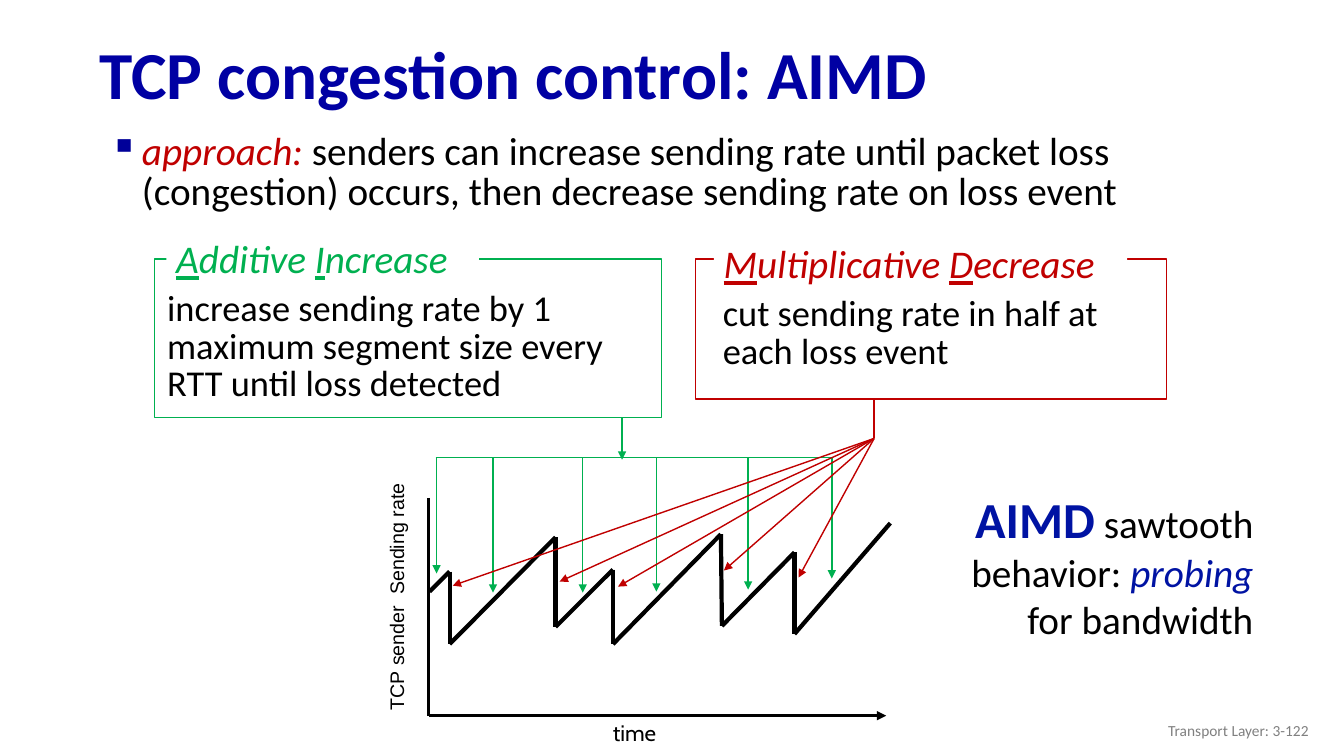
from lxml import etree
from pptx import Presentation
from pptx.dml.color import RGBColor
from pptx.enum.shapes import MSO_CONNECTOR, MSO_SHAPE
from pptx.enum.text import MSO_ANCHOR, PP_ALIGN
from pptx.oxml.ns import qn
from pptx.util import Inches, Pt

LINE = MSO_CONNECTOR.STRAIGHT
RECTANGLE = MSO_SHAPE.RECTANGLE
TOP, MIDDLE = MSO_ANCHOR.TOP, MSO_ANCHOR.MIDDLE
LEFT, RIGHT = PP_ALIGN.LEFT, PP_ALIGN.RIGHT
COLORS = {
    "title": "0000A3", "bullet": "000099", "accent": "0013A3", "text": "000000",
    "increase": "00B050", "decrease": "C00000", "footer": "808080", "paper": "FFFFFF",
}
SAWTOOTH = [
    (4.26, 5.87), (4.46, 5.67), (4.46, 6.39), (5.51, 5.33), (5.51, 6.22), (6.08, 5.65),
    (6.08, 6.39), (7.15, 5.3), (7.16, 6.21), (7.88, 5.48), (7.88, 6.29), (8.83, 5.19),
]
INCREASE_TIPS = [(4.33, 5.69), (4.89, 5.88), (5.78, 5.88), (6.51, 5.87), (7.42, 5.85), (8.25, 5.74)]
DECREASE_TIPS = [(7.92, 5.73), (4.49, 5.81), (5.55, 5.77), (6.13, 5.82), (7.18, 5.66)]
INCREASE_RAIL = 4.54
LOSS_HUB = (8.67, 4.35)


def rgb(name):
    """Return the named colour."""
    return RGBColor.from_string(COLORS[name])


def write(shape, paragraphs, size, font="Calibri", align=LEFT, anchor=TOP, spacing=1.0, wrap=True):
    """Fill a shape with paragraphs of (text, colour, font overrides) runs."""
    frame = shape.text_frame
    frame.word_wrap = wrap
    frame.vertical_anchor = anchor
    for index, runs in enumerate(paragraphs):
        paragraph = frame.add_paragraph() if index else frame.paragraphs[0]
        paragraph.alignment = align
        paragraph.line_spacing = spacing
        for text, color, overrides in runs:
            run = paragraph.add_run()
            run.text = text
            run.font.name = font
            run.font.size = Pt(overrides.get("size", size))
            run.font.color.rgb = rgb(color)
            run.font.bold = overrides.get("bold", False)
            run.font.italic = overrides.get("italic", False)
            run.font.underline = overrides.get("underline", False)


def add_text(slide, box, paragraphs, size, **layout):
    """Add a text box and return it."""
    shape = slide.shapes.add_textbox(*map(Inches, box))
    write(shape, paragraphs, size, **layout)
    return shape


def add_panel(slide, box, outline=None):
    """Add a white rectangle with an optional outline."""
    panel = slide.shapes.add_shape(RECTANGLE, *map(Inches, box))
    panel.shadow.inherit = False
    panel.fill.solid()
    panel.fill.fore_color.rgb = rgb("paper")
    if outline:
        panel.line.color.rgb = rgb(outline)
        panel.line.width = Pt(1)
    else:
        panel.line.fill.background()
    return panel


def add_line(slide, start, end, color, width=1, arrow=False):
    """Add a straight line, with an arrowhead at its end if asked."""
    line = slide.shapes.add_connector(LINE, *map(Inches, (*start, *end)))
    line.line.color.rgb = rgb(color)
    line.line.width = Pt(width)
    if arrow:
        etree.SubElement(line.line._get_or_add_ln(), qn("a:tailEnd"), type="triangle")
    etree.SubElement(line._element.spPr, qn("a:effectLst"))


def indent(shape, left, first=0, bullet=None):
    """Indent the first paragraph and give it an optional bullet."""
    properties = shape.text_frame.paragraphs[0]._p.get_or_add_pPr()
    properties.set("marL", str(Inches(left)))
    properties.set("indent", str(Inches(first)))
    if bullet:
        color = etree.SubElement(properties, qn("a:buClr"))
        etree.SubElement(color, qn("a:srgbClr"), val=COLORS["bullet"])
        etree.SubElement(properties, qn("a:buChar"), char=bullet)


def add_rule(slide, color, frame, body_box, body, heading_box, words):
    """Add a framed rule whose heading breaks the top edge."""
    add_panel(slide, frame, color)
    explanation = add_text(slide, body_box, [[(body, "text", {})]], 26, spacing=0.85)
    indent(explanation, 0.5)
    heading = []
    for word in words:
        heading.append((word[0], color, {"italic": True, "underline": True}))
        heading.append((word[1:], color, {"italic": True}))
    write(add_panel(slide, heading_box), [heading], 28, spacing=0.85)


def add_graph(slide):
    """Draw the sawtooth, its axes and their labels."""
    for start, end in zip(SAWTOOTH, SAWTOOTH[1:]):
        add_line(slide, start, end, "text", 3)
    rate_label = add_panel(slide, (2.69, 5.73, 2.49, 0.34))
    rate_label.rotation = 270
    write(rate_label, [[("TCP sender  Sending rate", "text", {})]], 14, font="Arial")
    add_line(slide, (4.25, 7.1), (8.79, 7.1), "text", 2.25, arrow=True)
    add_line(slide, (4.25, 4.94), (4.25, 7.1), "text", 2.25)
    add_text(slide, (5.98, 7.09, 0.63, 0.37), [[("time", "text", {})]], 16, font="Cabin", wrap=False)


def add_pointers(slide):
    """Link each rule to the parts of the sawtooth it explains."""
    for x, y in INCREASE_TIPS:
        add_line(slide, (x, INCREASE_RAIL), (x, y), "increase", arrow=True)
    add_line(slide, (4.32, INCREASE_RAIL), (8.26, INCREASE_RAIL), "increase")
    add_line(slide, (6.17, 4.14), (6.17, 4.56), "increase", arrow=True)
    for tip in DECREASE_TIPS:
        add_line(slide, LOSS_HUB, tip, "decrease", arrow=True)
    add_line(slide, LOSS_HUB, (LOSS_HUB[0], 3.96), "decrease")


def main():
    """Build and save the slide."""
    deck = Presentation()
    deck.slide_width, deck.slide_height = Inches(13.33), Inches(7.5)
    slide = deck.slides.add_slide(deck.slide_layouts[6])

    add_text(slide, (0.89, 0.28, 12.44, 0.98),
             [[("TCP congestion control: AIMD", "title", {"bold": True})]],
             48, anchor=MIDDLE, spacing=0.9)
    approach = add_text(slide, (0.99, 1.28, 11.24, 1.58), [[
        ("approach: ", "decrease", {"italic": True}),
        ("senders can increase sending rate until packet loss (congestion) occurs, "
         "then decrease sending rate on loss event", "text", {}),
    ]], 28, spacing=0.85)
    indent(approach, 0.32, -0.32, "▪")
    add_text(slide, (9.5, 4.79, 3.03, 1.65), [
        [("AIMD", "accent", {"bold": True, "size": 36}), (" sawtooth", "text", {})],
        [("behavior: ", "text", {}), ("probing", "accent", {"italic": True})],
        [("for bandwidth", "text", {})],
    ], 28, align=RIGHT, wrap=False)

    add_graph(slide)
    add_rule(slide, "increase", (1.53, 2.57, 5.03, 1.57), (1.06, 2.85, 5.53, 1.58),
             "increase sending rate by 1 maximum segment size every RTT until loss detected",
             (1.65, 2.35, 3.1, 0.49), ("Additive ", "Increase"))
    add_rule(slide, "decrease", (6.9, 2.57, 4.67, 1.39), (6.57, 2.9, 5.19, 0.9),
             "cut sending rate in half at each loss event",
             (7.08, 2.4, 4.1, 0.49), ("Multiplicative ", "Decrease"))
    add_pointers(slide)
    add_text(slide, (10.08, 7.05, 3, 0.4), [[("Transport Layer: 3-122", "footer", {})]],
             11, align=RIGHT, anchor=MIDDLE)
    deck.save("out.pptx")


if __name__ == "__main__":
    main()
